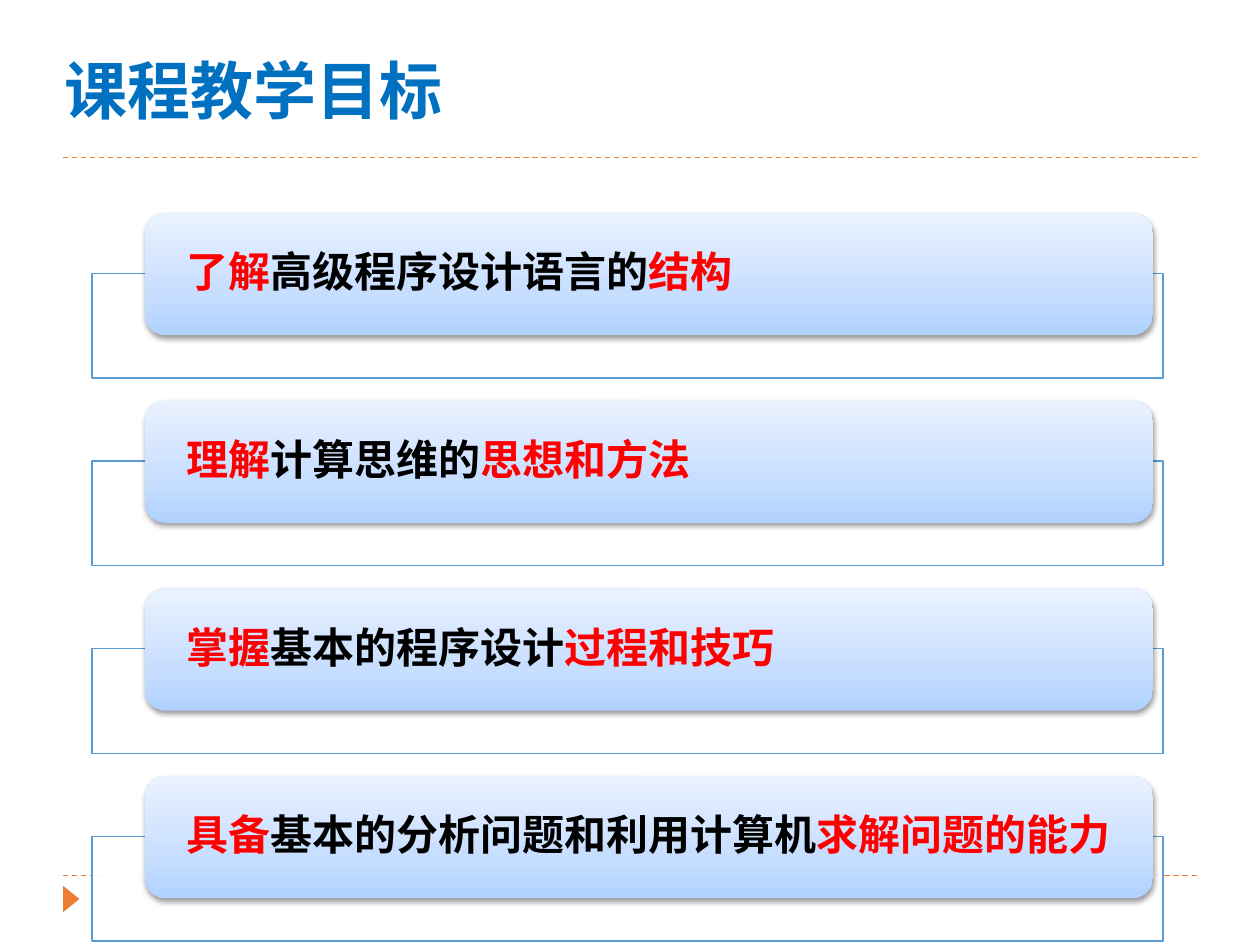
from pptx import Presentation
from pptx.dml.color import RGBColor
from pptx.enum import dml, shapes, text
from pptx.oxml import parse_xml
from pptx.oxml.ns import nsdecls, qn
from pptx.util import Inches, Pt

HEADING = "课程教学目标"
GOALS = [
    ("了解", "高级程序设计语言的", "结构"),
    ("理解", "计算思维的", "思想和方法"),
    ("掌握", "基本的程序设计", "过程和技巧"),
    ("具备", "基本的分析问题和利用计算机", "求解问题的能力"),
]
GRADIENT = [(0, "B0D2FF"), (35, "C7DEFF"), (100, "EAF2FF")]
ORANGE, BLUE, RED, BLACK = "ED7D31", "5B9BD5", "FF0000", "000000"
CJK = "Noto Sans CJK SC"
FIRST_TOP, PITCH, FRAME_DROP = 1.69, 1.49, 0.48


def rgb(code):
    return RGBColor.from_string(code)


def element(xml):
    head, rest = xml.split(" ", 1)
    return parse_xml(f"{head} {nsdecls('a')} {rest}")


def add_box(slide, preset, left, top, width, height):
    box = slide.shapes.add_shape(preset, *map(Inches, (left, top, width, height)))
    box.shadow.inherit = False
    return box


def style_run(run, size, color, latin):
    run.font.size = Pt(size)
    run.font.bold = True
    run.font.color.rgb = rgb(color)
    run.font.name = latin
    run.font._element.find(qn("a:latin")).addnext(element(f'<a:ea typeface="{CJK}"/>'))


def add_rule(slide, y):
    rule = slide.shapes.add_connector(
        shapes.MSO_CONNECTOR.STRAIGHT, Inches(0.5), Inches(y), Inches(9.5), Inches(y))
    rule.line.color.rgb = rgb(ORANGE)
    rule.line.width = Pt(0.75)
    rule.line.dash_style = dml.MSO_LINE.DASH
    rule._element.spPr.append(element("<a:effectLst />"))


def add_frame(slide, top):
    frame = add_box(slide, shapes.MSO_SHAPE.RECTANGLE, 0.73, top, 8.5, 0.83)
    frame.fill.solid()
    frame.fill.fore_color.rgb = rgb("FFFFFF")
    tint = frame._element.spPr.find(qn("a:solidFill"))[0]
    tint.append(element('<a:alpha val="90000"/>'))
    frame.line.color.rgb = rgb(BLUE)
    frame.line.width = Pt(0.75)


def add_card(slide, top, phrases):
    card = add_box(slide, shapes.MSO_SHAPE.ROUNDED_RECTANGLE, 1.15, top, 8, 0.97)
    card.line.fill.background()
    card.fill.gradient()
    card.fill.gradient_angle = 90
    stops = card._element.spPr.find(qn("a:gradFill")).find(qn("a:gsLst"))
    for stop in list(stops):
        stops.remove(stop)
    for position, color in GRADIENT:
        stops.append(element(
            f'<a:gs pos="{position * 1000}"><a:srgbClr val="{color}"/></a:gs>'))
    card._element.spPr.find(qn("a:effectLst")).append(element(
        f'<a:outerShdw blurRad="{Pt(3.1)}" dist="{Pt(1.6)}" dir="5400000" rotWithShape="0">'
        f'<a:srgbClr val="{BLACK}"><a:alpha val="38000"/></a:srgbClr></a:outerShdw>'))

    body = card.text_frame
    body.word_wrap = True
    body.vertical_anchor = text.MSO_ANCHOR.MIDDLE
    body.margin_left = body.margin_right = Inches(0.28)
    body.margin_top = body.margin_bottom = 0
    goal = body.paragraphs[0]
    goal.alignment = text.PP_ALIGN.LEFT
    goal.line_spacing = 0.9
    for phrase, color in zip(phrases, (RED, BLACK, RED)):
        run = goal.add_run()
        run.text = phrase
        style_run(run, 24, color, "Calibri")


def main():
    deck = Presentation()
    deck.slide_width, deck.slide_height = Inches(10), Inches(7.5)
    slide = deck.slides.add_slide(deck.slide_layouts[5])

    for y in (6.95, 1.25):
        add_rule(slide, y)
    marker = add_box(slide, shapes.MSO_SHAPE.ISOSCELES_TRIANGLE, 0.46, 7.07, 0.21, 0.13)
    marker.rotation = 90
    marker.fill.solid()
    marker.fill.fore_color.rgb = rgb(ORANGE)
    marker.line.fill.background()

    for index, phrases in enumerate(GOALS):
        top = FIRST_TOP + index * PITCH
        add_frame(slide, top + FRAME_DROP)
        add_card(slide, top, phrases)

    title = slide.shapes.title
    title.left, title.top, title.width, title.height = map(Inches, (0.41, 0.36, 7.09, 0.71))
    title.text_frame.text = HEADING
    title.text_frame.vertical_anchor = text.MSO_ANCHOR.TOP
    heading = title.text_frame.paragraphs[0]
    heading.alignment = text.PP_ALIGN.LEFT
    style_run(heading.runs[0], 36, "0070C0", CJK)

    deck.save("out.pptx")


if __name__ == "__main__":
    main()
